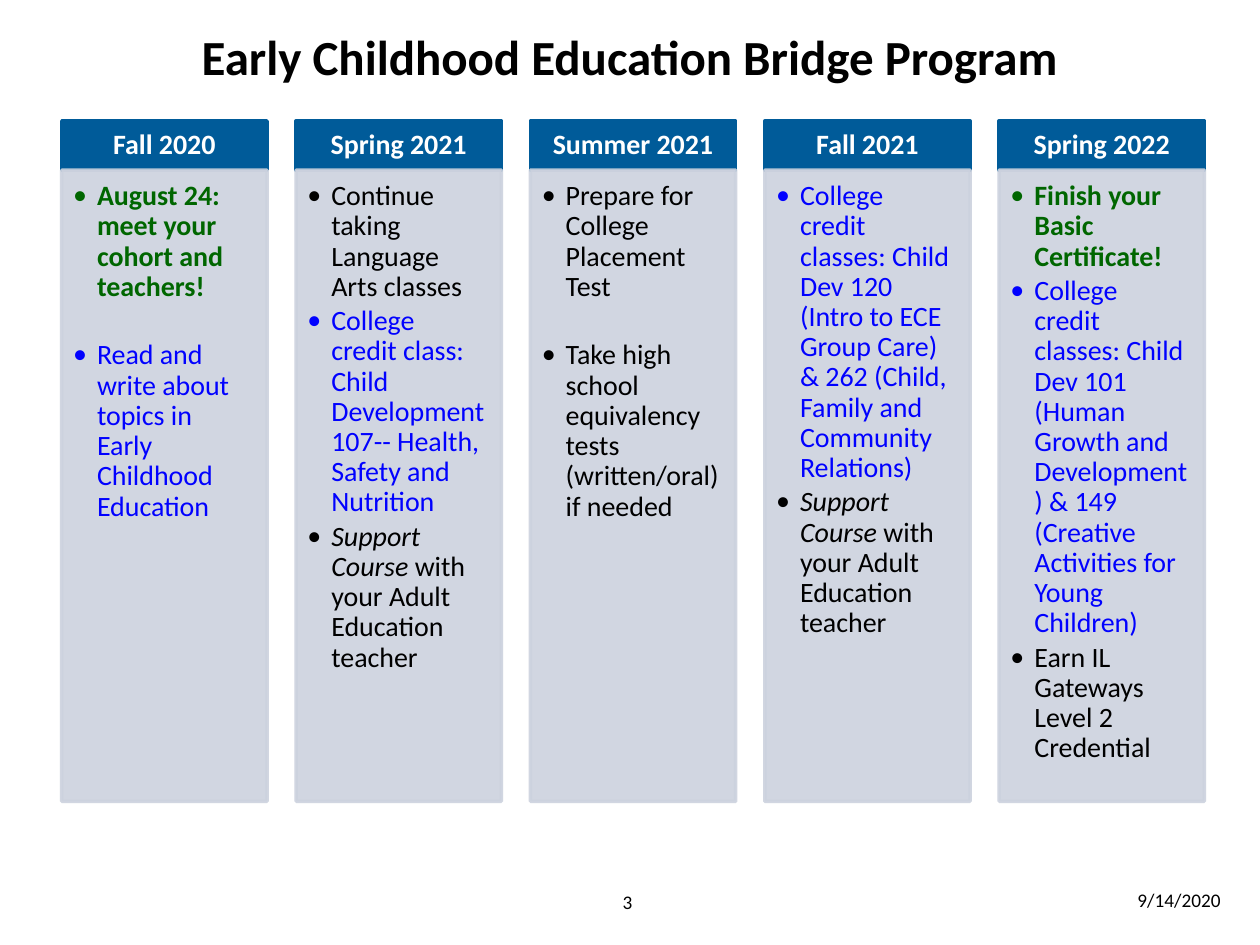
from lxml import etree
from pptx import Presentation
from pptx.dml.color import RGBColor
from pptx.enum import shapes, text
from pptx.oxml.ns import qn
from pptx.util import Inches, Pt

COLORS = {
    "black": "000000", "white": "FFFFFF", "header": "005B99",
    "panel": "CCD2DE", "milestone": "006600", "credit": "0101FF",
}
FONT = "Calibri"
TITLE = "Early Childhood Education Bridge Program"

# Each item: kind, text, and optionally an italic lead-in
SUPPORT = ("plain", "with your Adult Education teacher", "Support Course ")
TERMS = [
    ("Fall 2020", [
        ("milestone", "August 24: meet your cohort and teachers!"),
        ("credit", "Read and write about topics in Early Childhood Education"),
    ]),
    ("Spring 2021", [
        ("plain", "Continue taking Language Arts classes"),
        ("credit", "College credit class: Child Development 107-- Health, "
                   "Safety and Nutrition"),
        SUPPORT,
    ]),
    ("Summer 2021", [
        ("plain", "Prepare for College Placement Test"),
        ("plain", "Take high school equivalency tests (written/oral) if needed"),
    ]),
    ("Fall 2021", [
        ("credit", "College credit classes: Child Dev 120 (Intro to ECE Group "
                   "Care) & 262 (Child, Family and Community Relations)"),
        SUPPORT,
    ]),
    ("Spring 2022", [
        ("milestone", "Finish your Basic Certificate!"),
        ("credit", "College credit classes: Child Dev 101 (Human Growth and "
                   "Development) & 149 (Creative Activities for Young Children)"),
        ("plain", "Earn IL Gateways Level 2 Credential"),
    ]),
]

# Column grid, in inches
LEFT, PITCH, WIDTH = 0.49, 1.86, 1.63
HEADER_TOP, HEADER_HEIGHT, PANEL_HEIGHT = 0.96, 0.39, 5.01

prs = Presentation()
prs.slide_width, prs.slide_height = Inches(10), Inches(7.5)
slide = prs.slides.add_slide(prs.slide_layouts[6])


def set_font(paragraph, size, color, bold=False):
    font = paragraph.font
    font.name, font.size, font.bold = FONT, Pt(size), bold
    font.color.rgb = RGBColor.from_string(COLORS[color])


def set_frame(shape, insets, anchor=text.MSO_ANCHOR.TOP):
    frame = shape.text_frame
    frame.word_wrap = True
    frame.vertical_anchor = anchor
    (frame.margin_left, frame.margin_top,
     frame.margin_right, frame.margin_bottom) = map(Inches, insets)
    return frame


def add_label(box, words, size, align, insets, bold=False):
    frame = set_frame(slide.shapes.add_textbox(*map(Inches, box)), insets)
    line = frame.paragraphs[0]
    line.text, line.alignment = words, align
    set_font(line, size, "black", bold)


def add_block(left, top, height, color, alpha=None):
    block = slide.shapes.add_shape(
        shapes.MSO_SHAPE.RECTANGLE, *map(Inches, (left, top, WIDTH, height)))
    block.shadow.inherit = False
    block.line.width = Pt(2)
    for fill in (block.fill, block.line.fill):
        fill.solid()
        fill.fore_color.rgb = RGBColor.from_string(COLORS[color])
    if alpha:
        for paint in block._element.spPr.iter(qn("a:srgbClr")):
            etree.SubElement(paint, qn("a:alpha"), val=str(alpha * 1000))
    return block


def add_bullet(paragraph):
    props = paragraph._p.get_or_add_pPr()
    props.set("marL", str(Inches(0.19)))
    props.set("indent", str(-Inches(0.19)))
    etree.SubElement(props, qn("a:buFont"), typeface=FONT)
    etree.SubElement(props, qn("a:buChar"), char="•")


# Date, page number and title
ALIGN = text.PP_ALIGN
add_label((8.68, 7, 1.06, 0.29), "9/14/2020", 11, ALIGN.RIGHT, [0.05] * 4)
add_label((4.73, 7.02, 0.5, 0.29), "3", 11, ALIGN.CENTER, [0.05] * 4)
add_label((0.25, 0.16, 9.49, 0.57), TITLE, 28, ALIGN.CENTER,
          (0.1, 0.05, 0.1, 0.05), bold=True)

# One header and one panel per term
for column, (term, items) in enumerate(TERMS):
    left = LEFT + column * PITCH

    header = add_block(left, HEADER_TOP, HEADER_HEIGHT, "header")
    heading = set_frame(header, (0.12, 0.07, 0.12, 0.07),
                        text.MSO_ANCHOR.MIDDLE).paragraphs[0]
    heading.text, heading.alignment = term, ALIGN.CENTER
    heading.line_spacing = 0.9
    set_font(heading, 16, "white", bold=True)

    panel = add_block(left, HEADER_TOP + HEADER_HEIGHT, PANEL_HEIGHT, "panel", 90)
    frame = set_frame(panel, (0.09, 0.09, 0.12, 0.14))
    # Two-item terms are spread about a line apart
    gap = Pt(22) if len(items) == 2 and SUPPORT not in items else Pt(2.4)
    for row, (kind, words, *lead) in enumerate(items):
        item = frame.add_paragraph() if row else frame.paragraphs[0]
        add_bullet(item)
        item.alignment = ALIGN.LEFT
        item.line_spacing, item.space_after = 0.9, gap
        set_font(item, 16, "black" if kind == "plain" else kind,
                 bold=kind == "milestone")
        for phrase in lead:
            run = item.add_run()
            run.text, run.font.italic = phrase, True
        item.add_run().text = words

prs.save("out.pptx")
